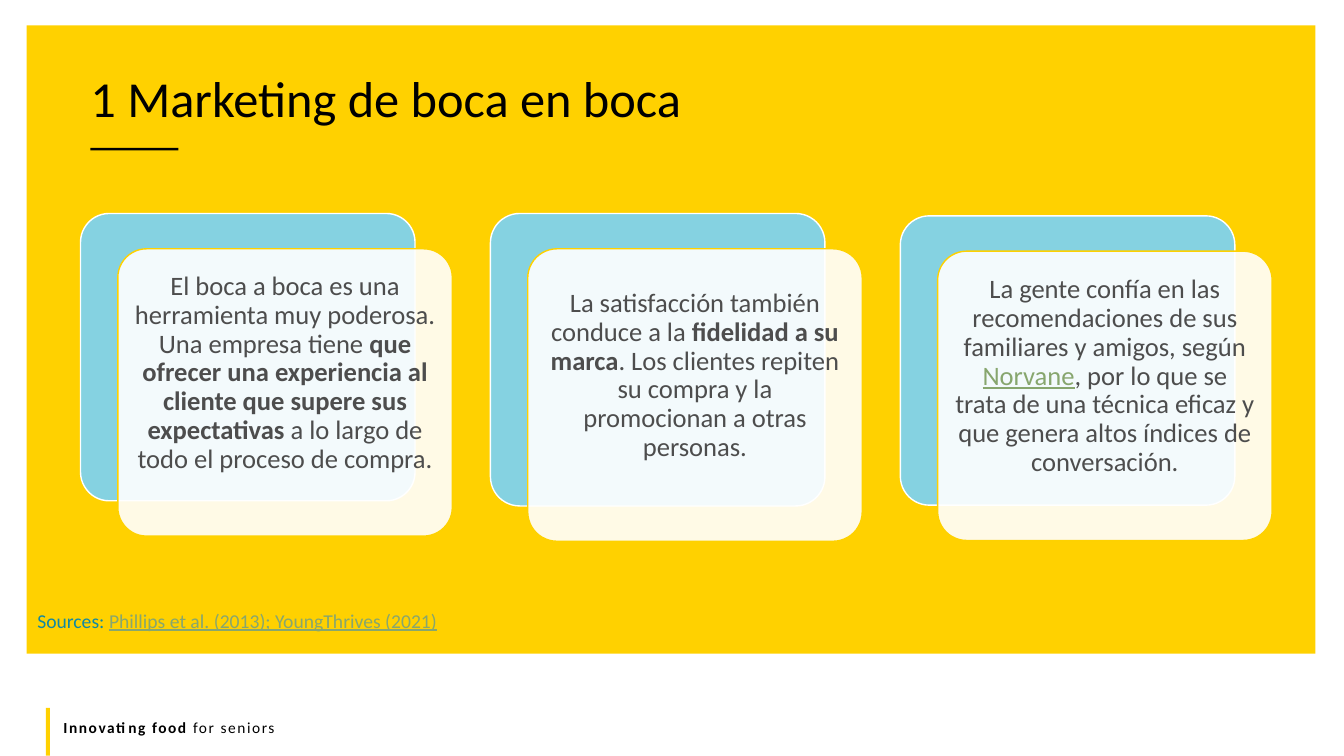
from pptx import Presentation
from pptx.dml.color import RGBColor
from pptx.enum.shapes import MSO_SHAPE
from pptx.enum.text import MSO_ANCHOR, PP_ALIGN
from pptx.oxml.ns import qn
from pptx.util import Cm, Pt
from lxml import etree

RECT, ROUNDED = MSO_SHAPE.RECTANGLE, MSO_SHAPE.ROUNDED_RECTANGLE
TOP, MIDDLE = MSO_ANCHOR.TOP, MSO_ANCHOR.MIDDLE
LEFT, CENTER = PP_ALIGN.LEFT, PP_ALIGN.CENTER

FONT = "Calibri"
YELLOW, BLACK, WHITE = "FFD100", "000000", "FFFFFF"
AQUA, GOLD, GREY, TEAL, GREEN = "85D2E1", "FED100", "4D4D4D", "1188A3", "87A66E"
PLAIN, BOLD, LINK = "plain", "bold", "link"

TITLE = [("1 Marketing de boca en boca", PLAIN)]
SOURCES = [("Sources: ", PLAIN), ("Phillips et al. (2013); YoungThrives (2021)", LINK)]
FOOTER = [("Innovating food ", BOLD), ("for seniors", PLAIN)]
CARDS = [
    (5.38, 7.24, [
        ("El boca a boca es una herramienta muy poderosa. Una empresa tiene ", PLAIN),
        ("que ofrecer una experiencia al cliente que supere sus expectativas", BOLD),
        (" a lo largo de todo el proceso de compra.", PLAIN)]),
    (5.38, 7.37, [
        ("La satisfacción también conduce a la ", PLAIN),
        ("fidelidad a su marca", BOLD),
        (". Los clientes repiten su compra y la promocionan a otras personas.", PLAIN)]),
    (5.44, 7.29, [
        ("La gente confía en las recomendaciones de sus familiares y amigos, según ", PLAIN),
        ("Norvane", LINK),
        (", por lo que se trata de una técnica eficaz y que genera altos índices de "
         "conversación.", PLAIN)]),
]
CARD_LEFT, CARD_STEP, CARD_WIDTH = 2.03, 10.33, 8.43
OFFSET_X, OFFSET_Y = 0.94, 0.89
CARD_INSETS = (0.2, 0.2, 0.2, 1.17)
BOX_INSETS = (0.25, 0.13, 0.25, 0.13)


def color(code):
    return RGBColor.from_string(code)


def add_block(page, kind, place, fill, line=None):
    block = page.shapes.add_shape(kind, *map(Cm, place))
    block.shadow.inherit = False
    block.fill.solid()
    block.fill.fore_color.rgb = color(fill)
    if line:
        block.line.color.rgb = color(line)
        block.line.width = Pt(1)
    else:
        block.line.fill.background()
    if kind == ROUNDED:
        block.adjustments[0] = 0.1
    return block


def make_translucent(block, percent):
    tint = block.fill._xPr.find(qn("a:solidFill"))[0]
    etree.SubElement(tint, qn("a:alpha")).set("val", str(percent * 1000))


def write(box, runs, size, ink, align=LEFT, anchor=TOP, insets=BOX_INSETS,
          spacing=1.0, wrap=True, tracking=0):
    frame = box.text_frame
    frame.word_wrap = wrap
    frame.vertical_anchor = anchor
    (frame.margin_left, frame.margin_top,
     frame.margin_right, frame.margin_bottom) = map(Cm, insets)
    para = frame.paragraphs[0]
    para.alignment = align
    para.line_spacing = spacing
    for text, style in runs:
        span = para.add_run()
        span.text = text
        span.font.name = FONT
        span.font.size = Pt(size)
        span.font.bold = style == BOLD
        span.font.underline = style == LINK
        span.font.color.rgb = color(GREEN if style == LINK else ink)
        if tracking:
            span._r.get_or_add_rPr().set("spc", str(tracking))


def add_text(page, place, *args, **options):
    write(page.shapes.add_textbox(*map(Cm, place)), *args, **options)


def main():
    deck = Presentation()
    deck.slide_width, deck.slide_height = Cm(33.87), Cm(19.05)
    page = deck.slides.add_slide(deck.slide_layouts[6])

    add_block(page, RECT, (0.67, 0.64, 32.48, 15.83), YELLOW)
    add_block(page, RECT, (2.28, 3.73, 2.22, 0.06), BLACK)
    add_block(page, RECT, (1.16, 17.84, 0.1, 1.2), YELLOW)
    add_text(page, (1.35, 17.96, 30.48, 0.74), FOOTER, 11, BLACK, tracking=110)
    add_text(page, (2.03, 1.78, 30.02, 1.63), TITLE, 36, BLACK,
             anchor=MIDDLE, spacing=0.8)
    add_text(page, (0.69, 15.21, 10.69, 0.86), SOURCES, 14, TEAL, wrap=False)

    for index, (top, height, runs) in enumerate(CARDS):
        left = CARD_LEFT + index * CARD_STEP
        add_block(page, ROUNDED, (left, top, CARD_WIDTH, height), AQUA, WHITE)
        card = add_block(page, ROUNDED, (left + OFFSET_X, top + OFFSET_Y, CARD_WIDTH, height),
                         WHITE, GOLD)
        make_translucent(card, 90)
        write(card, runs, 19, GREY, align=CENTER, anchor=MIDDLE,
              insets=CARD_INSETS, spacing=0.9)

    deck.save("out.pptx")


if __name__ == "__main__":
    main()
